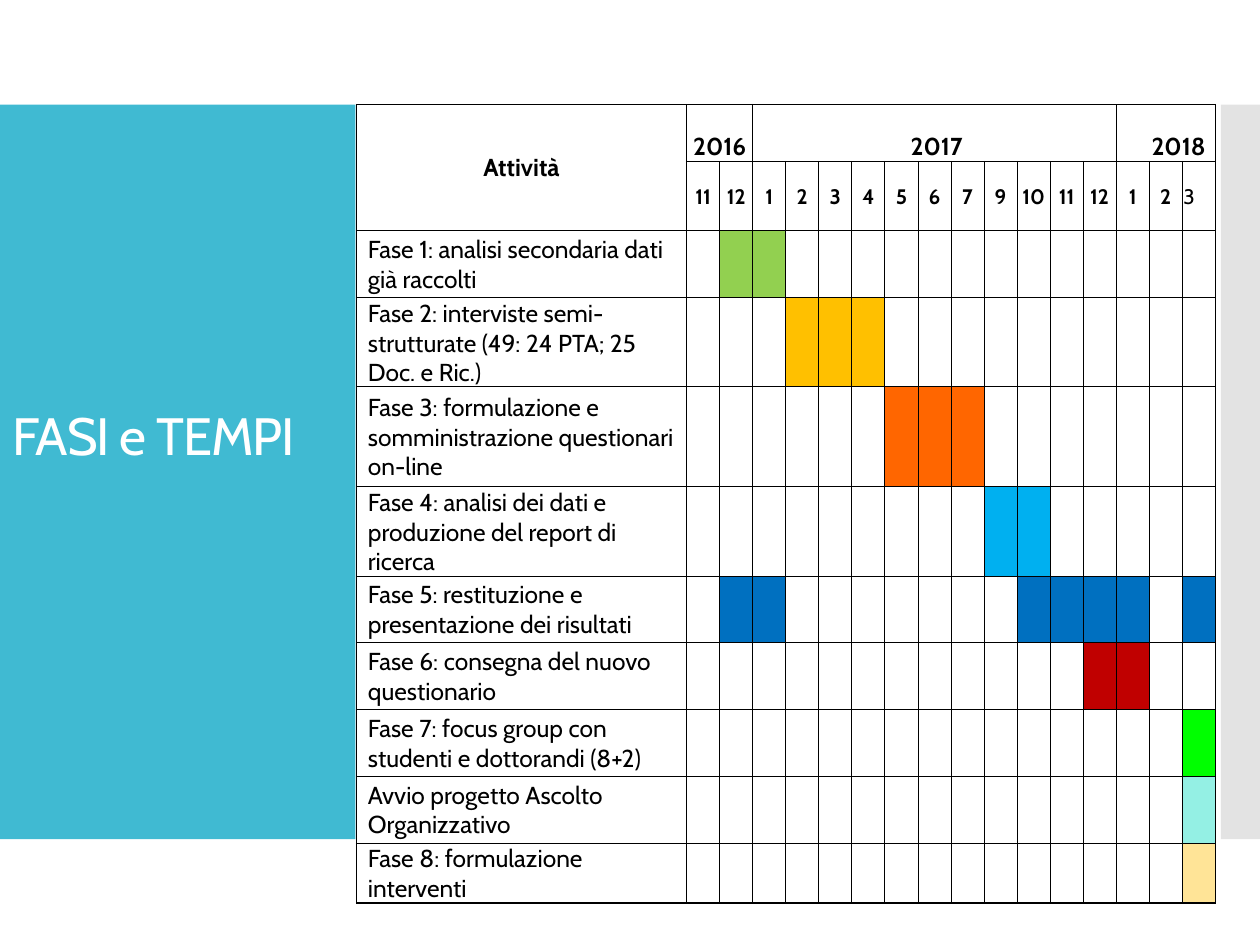
from dataclasses import dataclass

from lxml import etree
from pptx import Presentation
from pptx.dml.color import RGBColor
from pptx.enum.shapes import MSO_CONNECTOR, MSO_SHAPE
from pptx.enum.text import MSO_ANCHOR, PP_ALIGN
from pptx.oxml.ns import qn
from pptx.util import Inches, Pt

RECTANGLE = MSO_SHAPE.RECTANGLE
STRAIGHT = MSO_CONNECTOR.STRAIGHT
MIDDLE, BOTTOM = MSO_ANCHOR.MIDDLE, MSO_ANCHOR.BOTTOM
LEFT, CENTER = PP_ALIGN.LEFT, PP_ALIGN.CENTER


@dataclass(frozen=True)
class Theme:
    font: str = "Cabin"
    teal: str = "40BAD2"
    grey: str = "C8C8C8"
    white: str = "FFFFFF"
    black: str = "000000"
    title_size: float = 30
    label_size: float = 14
    month_size: float = 12
    thin: float = 0.5
    divider: float = 0.75
    thick: float = 1


@dataclass(frozen=True)
class Phase:
    label: str
    height: float
    color: str
    months: tuple[int, ...]  # positions in MONTHS


THEME = Theme()
MONTHS = (11, 12, 1, 2, 3, 4, 5, 6, 7, 9, 10, 11, 12, 1, 2, 3)
PHASES = (
    Phase("Fase 1: analisi secondaria dati già raccolti", 0.53, "92D050", (1, 2)),
    Phase("Fase 2: interviste semi-strutturate (49: 24 PTA; 25 Doc. e Ric.)",
          0.71, "FFC000", (3, 4, 5)),
    Phase("Fase 3: formulazione e somministrazione questionari on-line",
          0.79, "FF6600", (6, 7, 8)),
    Phase("Fase 4: analisi dei dati e produzione del report di ricerca",
          0.71, "00B0F0", (9, 10)),
    Phase("Fase 5: restituzione e presentazione dei risultati",
          0.53, "0070C0", (1, 2, 10, 11, 12, 13, 15)),
    Phase("Fase 6: consegna del nuovo questionario", 0.53, "C00000", (12, 13)),
    Phase("Fase 7: focus group con studenti e dottorandi (8+2)",
          0.53, "00FF00", (15,)),
    Phase("Avvio progetto Ascolto Organizzativo", 0.53, "94F0E4", (15,)),
    Phase("Fase 8: formulazione interventi", 0.31, "FFE497", (15,)),
)
HEADER_HEIGHTS = (0.45, 0.55)
TABLE_LEFT, TABLE_TOP, TABLE_WIDTH = 2.83, 0.83, 6.82
LABEL_WIDTH = 2.62
MONTH_WIDTH = (TABLE_WIDTH - LABEL_WIDTH) / len(MONTHS)
FIRST_2017 = 3  # table columns
FIRST_2018 = 14


def rgb(color: str) -> RGBColor:
    return RGBColor.from_string(color)


def style_font(para, size: float, color: str, bold: bool = False) -> None:
    font = para.font
    font.name, font.size, font.bold = THEME.font, Pt(size), bold
    font.color.rgb = rgb(color)


def add_band(slide, left: float, width: float, color: str, alpha: int = 100) -> None:
    band = slide.shapes.add_shape(
        RECTANGLE, Inches(left), Inches(0.83), Inches(width), Inches(5.83))
    band.shadow.inherit = False
    band.fill.solid()
    band.fill.fore_color.rgb = rgb(color)
    band.line.fill.background()
    if alpha < 100:
        color_node = band.fill._xPr.find(".//" + qn("a:srgbClr"))
        etree.SubElement(color_node, qn("a:alpha"), val=str(alpha * 1000))


def add_title(slide, text: str) -> None:
    box = slide.shapes.add_textbox(Inches(0), Inches(1.23), Inches(2.87), Inches(4.5))
    frame = box.text_frame
    frame.word_wrap = True
    frame.vertical_anchor = MIDDLE
    para = frame.paragraphs[0]
    para.line_spacing = 0.9
    style_font(para, THEME.title_size, THEME.white)
    span = para.add_run()
    span.text = text
    span._r.get_or_add_rPr().set("spc", "-60")


def set_borders(cell, row: int, column: int, row_count: int) -> None:
    """Thick lines frame the table, the label column and the year 2016."""
    thick_columns = (0, 1, FIRST_2017, len(MONTHS) + 1)
    thick_rows = (0, row_count)
    sides = (
        ("L", column in thick_columns),
        ("R", column + 1 in thick_columns),
        ("T", row in thick_rows),
        ("B", row + 1 in thick_rows),
    )
    properties = cell._tc.get_or_add_tcPr()
    for position, (side, is_thick) in enumerate(sides):
        width = Pt(THEME.thick if is_thick else THEME.thin)
        line = etree.Element(qn(f"a:ln{side}"), w=str(width))
        fill = etree.SubElement(line, qn("a:solidFill"))
        etree.SubElement(fill, qn("a:srgbClr"), val=THEME.black)
        properties.insert(position, line)


def write_cell(cell, text: str, size: float, bold: bool = True,
               align: PP_ALIGN = CENTER, anchor: MSO_ANCHOR = MIDDLE) -> None:
    cell.vertical_anchor = anchor
    para = cell.text_frame.paragraphs[0]
    para.alignment = align
    style_font(para, size, THEME.black, bold)
    para.add_run().text = text


def add_center_tabs(para, positions: tuple[float, ...]) -> None:
    properties = para._p.get_or_add_pPr()
    tabs = etree.Element(qn("a:tabLst"))
    for position in positions:
        etree.SubElement(tabs, qn("a:tab"), pos=str(Inches(position)), algn="ctr")
    properties.find(qn("a:defRPr")).addprevious(tabs)


def write_header(table) -> None:
    table.cell(0, 0).merge(table.cell(1, 0))
    table.cell(0, 1).merge(table.cell(0, FIRST_2017 - 1))
    years = table.cell(0, FIRST_2017)
    years.merge(table.cell(0, len(MONTHS)))
    write_cell(table.cell(0, 0), "Attività", THEME.label_size)
    write_cell(table.cell(0, 1), "2016", THEME.label_size, anchor=BOTTOM)
    write_cell(years, "\t2017\t2018", THEME.label_size, align=LEFT, anchor=BOTTOM)
    add_center_tabs(years.text_frame.paragraphs[0], (1.45, 3.37))
    for column, month in enumerate(MONTHS, start=1):
        is_last = column == len(MONTHS)
        write_cell(table.cell(1, column), str(month), THEME.month_size,
                   bold=not is_last, align=LEFT if is_last else CENTER)


def add_schedule(slide) -> None:
    heights = HEADER_HEIGHTS + tuple(phase.height for phase in PHASES)
    table = slide.shapes.add_table(
        len(heights), len(MONTHS) + 1, Inches(TABLE_LEFT), Inches(TABLE_TOP),
        Inches(TABLE_WIDTH), Inches(sum(heights))).table
    table.first_row = table.horz_banding = False
    for column, table_column in enumerate(table.columns):
        table_column.width = Inches(MONTH_WIDTH if column else LABEL_WIDTH)
    for row, height in enumerate(heights):
        table.rows[row].height = Inches(height)
        for column in range(len(MONTHS) + 1):
            cell = table.cell(row, column)
            cell.margin_left = cell.margin_right = cell.margin_top = Inches(0.01)
            cell.margin_bottom = 0
            cell.fill.solid()
            cell.fill.fore_color.rgb = rgb(THEME.white)
            set_borders(cell, row, column, len(heights))
    write_header(table)
    for row, phase in enumerate(PHASES, start=len(HEADER_HEIGHTS)):
        label = table.cell(row, 0)
        label.margin_left = Inches(0.09)
        write_cell(label, phase.label, THEME.label_size, bold=False, align=LEFT)
        for month in phase.months:
            table.cell(row, month + 1).fill.fore_color.rgb = rgb(phase.color)


def add_year_divider(slide) -> None:
    x = Inches(TABLE_LEFT + LABEL_WIDTH + (FIRST_2018 - 1) * MONTH_WIDTH)
    divider = slide.shapes.add_connector(
        STRAIGHT, x, Inches(TABLE_TOP), x, Inches(1.36))
    divider.line.color.rgb = rgb(THEME.black)
    divider.line.width = Pt(THEME.divider)
    etree.SubElement(divider._element.spPr, qn("a:effectLst"))


def main() -> None:
    deck = Presentation()
    deck.slide_width, deck.slide_height = Inches(10), Inches(7.5)
    page = deck.slides.add_slide(deck.slide_layouts[6])
    add_band(page, 0, 2.82, THEME.teal)
    add_band(page, 9.69, 0.31, THEME.grey, alpha=50)
    add_title(page, "FASI e TEMPI")
    add_schedule(page)
    add_year_divider(page)
    deck.save("out.pptx")


if __name__ == "__main__":
    main()
